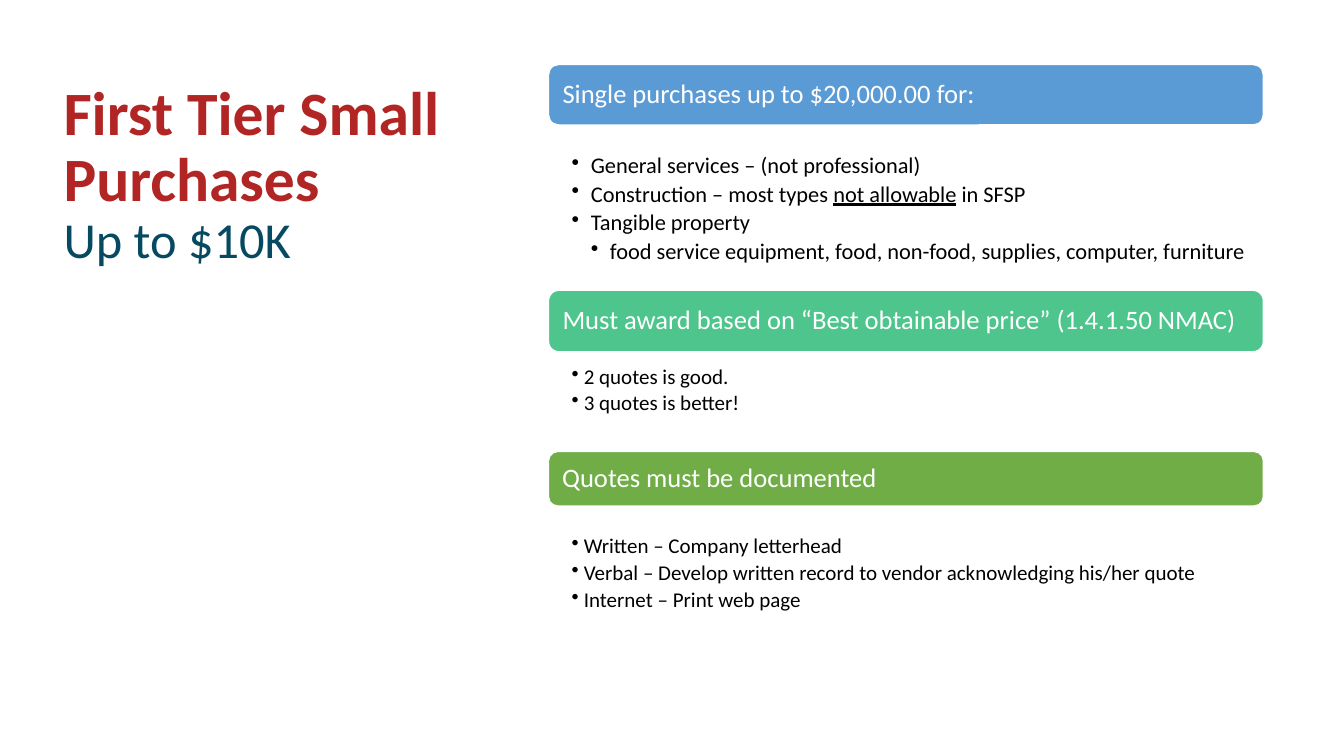
import pptx
import pptx.util
import pptx.dml.color
import pptx.enum.shapes
import pptx.enum.text
import pptx.oxml.ns
import lxml.etree

Inches = pptx.util.Inches
Pt = pptx.util.Pt
RGBColor = pptx.dml.color.RGBColor
Anchor = pptx.enum.text.MSO_ANCHOR
LEFT = pptx.enum.text.PP_ALIGN.LEFT

RED = RGBColor(0xB1, 0x25, 0x24)
NAVY = RGBColor(0x06, 0x49, 0x61)
BLUE = RGBColor(0x5B, 0x9B, 0xD5)
MINT = RGBColor(0x4D, 0xC5, 0x8D)
GREEN = RGBColor(0x70, 0xAD, 0x47)
WHITE = RGBColor(0xFF, 0xFF, 0xFF)
BLACK = RGBColor(0, 0, 0)
FONT = "Calibri"
X = Inches(5.44)
WIDTH = Inches(7.09)


def inset(frame, left, top, right):
    frame.word_wrap = True
    frame.auto_size = pptx.enum.text.MSO_AUTO_SIZE.NONE
    frame.margin_left = Inches(left)
    frame.margin_right = Inches(right)
    frame.margin_top = frame.margin_bottom = Inches(top)


def style(font, size, color):
    font.name = FONT
    font.size = Pt(size)
    font.color.rgb = color


deck = pptx.Presentation()
deck.slide_width = Inches(13.33)
deck.slide_height = Inches(7.5)
slide = deck.slides.add_slide(deck.slide_layouts[5])

title = slide.shapes.title
title.left, title.top = Inches(0.53), Inches(0.43)
title.width, title.height = Inches(4.37), Inches(2.63)
frame = title.text_frame
inset(frame, 0.1, 0.05, 0.1)
frame.vertical_anchor = Anchor.MIDDLE
frame.text = "First Tier Small Purchases\vUp to $10K"
para = frame.paragraphs[0]
para.alignment = LEFT
para.line_spacing = 0.9
main, sub = para.runs
style(main.font, 44, RED)
main.font.bold = True
style(sub.font, 36, NAVY)
sub.font.bold = False

parts = [
    (0.64, 0.6, BLUE, "Single purchases up to $20,000.00 for:",
     1.51, 1.22, 16, 0.19, 0.12,
     [(1, ["General services – (not professional)"]),
      (1, ["Construction – most types ", "not allowable", " in SFSP"]),
      (1, ["Tangible property"]),
      (2, ["food service equipment, food, non-food, supplies, computer, furniture"])]),
    (2.88, 0.61, MINT, "Must award based on “Best obtainable price” (1.4.1.50 NMAC)",
     3.61, 0.88, 15, 0.12, 0.15,
     [(1, ["2 quotes is good."]),
      (1, ["3 quotes is better!"])]),
    (4.48, 0.54, GREEN, "Quotes must be documented",
     5.29, 1.55, 15, 0.12, 0.15,
     [(1, ["Written – Company letterhead"]),
      (1, ["Verbal – Develop written record to vendor acknowledging his/her quote"]),
      (1, ["Internet – Print web page"])]),
]

for top, high, color, head, low, tall, size, step, right, items in parts:
    bar = slide.shapes.add_shape(
        pptx.enum.shapes.MSO_SHAPE.ROUNDED_RECTANGLE,
        X, Inches(top), WIDTH, Inches(high))
    bar.shadow.inherit = False
    bar.fill.solid()
    bar.fill.fore_color.rgb = color
    bar.line.color.rgb = WHITE
    bar.line.width = Pt(1)
    frame = bar.text_frame
    inset(frame, 0.11, 0.08, 0.11)
    frame.vertical_anchor = Anchor.MIDDLE
    frame.text = head
    para = frame.paragraphs[0]
    para.alignment = LEFT
    para.line_spacing = 0.9
    style(para.runs[0].font, 19, WHITE)

    box = slide.shapes.add_textbox(X, Inches(low), WIDTH, Inches(tall))
    frame = box.text_frame
    inset(frame, 0.23, 0.02, right)
    for count, (level, texts) in enumerate(items):
        para = frame.add_paragraph() if count else frame.paragraphs[0]
        para.level = level
        para.line_spacing = 0.9
        para.space_after = Pt(size * 0.2)
        props = para._p.get_or_add_pPr()
        props.set("marL", str(Inches(step * level)))
        props.set("indent", str(-Inches(step)))
        mark = lxml.etree.SubElement(props, pptx.oxml.ns.qn("a:buChar"))
        mark.set("char", "•")
        for text in texts:
            run = para.add_run()
            run.text = text
            style(run.font, size, BLACK)
            if text == "not allowable":
                run.font.underline = True

deck.save("out.pptx")
